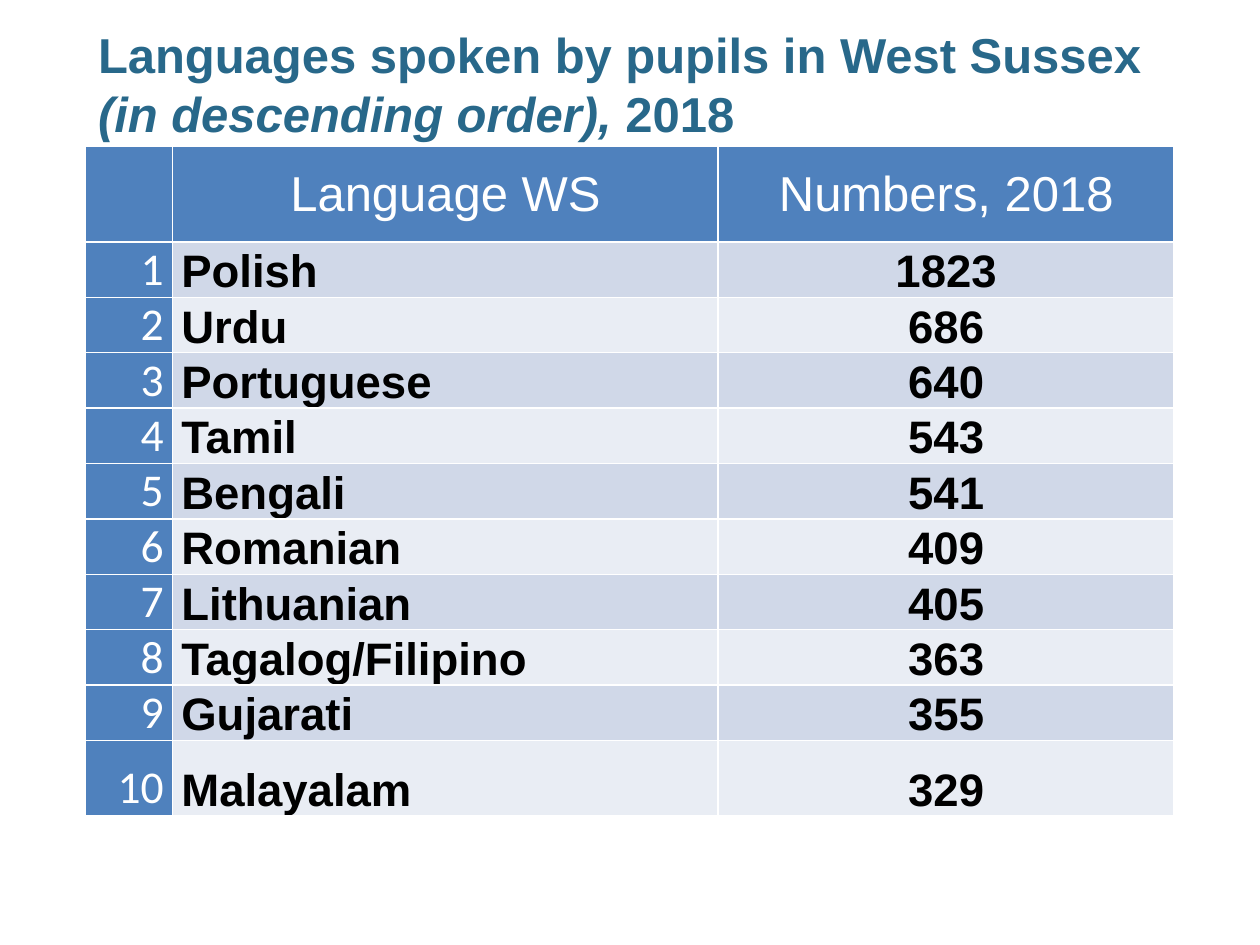
"""Build a slide with a ranked table of languages spoken by pupils."""
import pptx
import pptx.dml.color
import pptx.enum.text
import pptx.util
from pptx.util import Inches

TITLE_RUNS = [
    ("Languages spoken by pupils in West Sussex ", False),
    ("(in descending order), ", True),
    ("2018", False),
]
HEADINGS = ("", "Language WS", "Numbers, 2018")
LANGUAGES = [
    ("Polish", 1823),
    ("Urdu", 686),
    ("Portuguese", 640),
    ("Tamil", 543),
    ("Bengali", 541),
    ("Romanian", 409),
    ("Lithuanian", 405),
    ("Tagalog/Filipino", 363),
    ("Gujarati", 355),
    ("Malayalam", 329),
]
COLUMN_WIDTHS = (0.69, 4.33, 3.62)
ROW_HEIGHTS = [0.76] + [0.44] * 9 + [0.6]
TEAL, BLUE, WHITE, BLACK = "28688A", "4F81BD", "FFFFFF", "000000"
BANDS = ("D0D8E8", "E9EDF4")
ALIGN = pptx.enum.text.PP_ALIGN
ANCHOR = pptx.enum.text.MSO_ANCHOR
COLUMN_ALIGNMENTS = (ALIGN.RIGHT, ALIGN.LEFT, ALIGN.CENTER)


def rgb(value):
    return pptx.dml.color.RGBColor.from_string(value)


def set_font(font, name, size, color, bold):
    font.name = name
    font.size = pptx.util.Pt(size)
    font.bold = bold
    font.color.rgb = rgb(color)


def add_title(slide):
    box = slide.shapes.add_textbox(Inches(0.68), Inches(0.03), Inches(8.94), Inches(1.26))
    frame = box.text_frame
    frame.word_wrap = True
    frame.vertical_anchor = ANCHOR.MIDDLE
    paragraph = frame.paragraphs[0]
    set_font(paragraph.font, "Arial", 28, TEAL, True)
    for text, italic in TITLE_RUNS:
        run = paragraph.add_run()
        run.text = text
        run.font.italic = italic


def fill_cell(cell, text, fill, anchor, alignment, font):
    cell.fill.solid()
    cell.fill.fore_color.rgb = rgb(fill)
    cell.vertical_anchor = anchor
    cell.margin_left = cell.margin_right = Inches(0.07)
    cell.margin_top = cell.margin_bottom = 0
    cell.text = str(text)
    paragraph = cell.text_frame.paragraphs[0]
    paragraph.alignment = alignment
    set_font(paragraph.font, *font)


def add_language_table(slide):
    table = slide.shapes.add_table(
        len(ROW_HEIGHTS), len(COLUMN_WIDTHS), Inches(0.68), Inches(1.16),
        Inches(sum(COLUMN_WIDTHS)), Inches(sum(ROW_HEIGHTS)),
    ).table
    for column, width in zip(table.columns, COLUMN_WIDTHS):
        column.width = Inches(width)
    for row, height in zip(table.rows, ROW_HEIGHTS):
        row.height = Inches(height)

    for column, heading in enumerate(HEADINGS):
        fill_cell(table.cell(0, column), heading, BLUE, ANCHOR.MIDDLE, ALIGN.CENTER,
                  ("Arial", 28, WHITE, False))
    for rank, (language, number) in enumerate(LANGUAGES, start=1):
        band = BANDS[(rank - 1) % 2]
        for column, text in enumerate((rank, language, number)):
            is_rank = column == 0
            font = ("Calibri", 26, WHITE, False) if is_rank else ("Arial", 26, BLACK, True)
            fill_cell(table.cell(rank, column), text, BLUE if is_rank else band,
                      ANCHOR.BOTTOM, COLUMN_ALIGNMENTS[column], font)


def main():
    presentation = pptx.Presentation()
    presentation.slide_width = Inches(10)
    presentation.slide_height = Inches(7.5)
    slide = presentation.slides.add_slide(presentation.slide_layouts[6])
    add_title(slide)
    add_language_table(slide)
    presentation.save("out.pptx")


if __name__ == "__main__":
    main()
